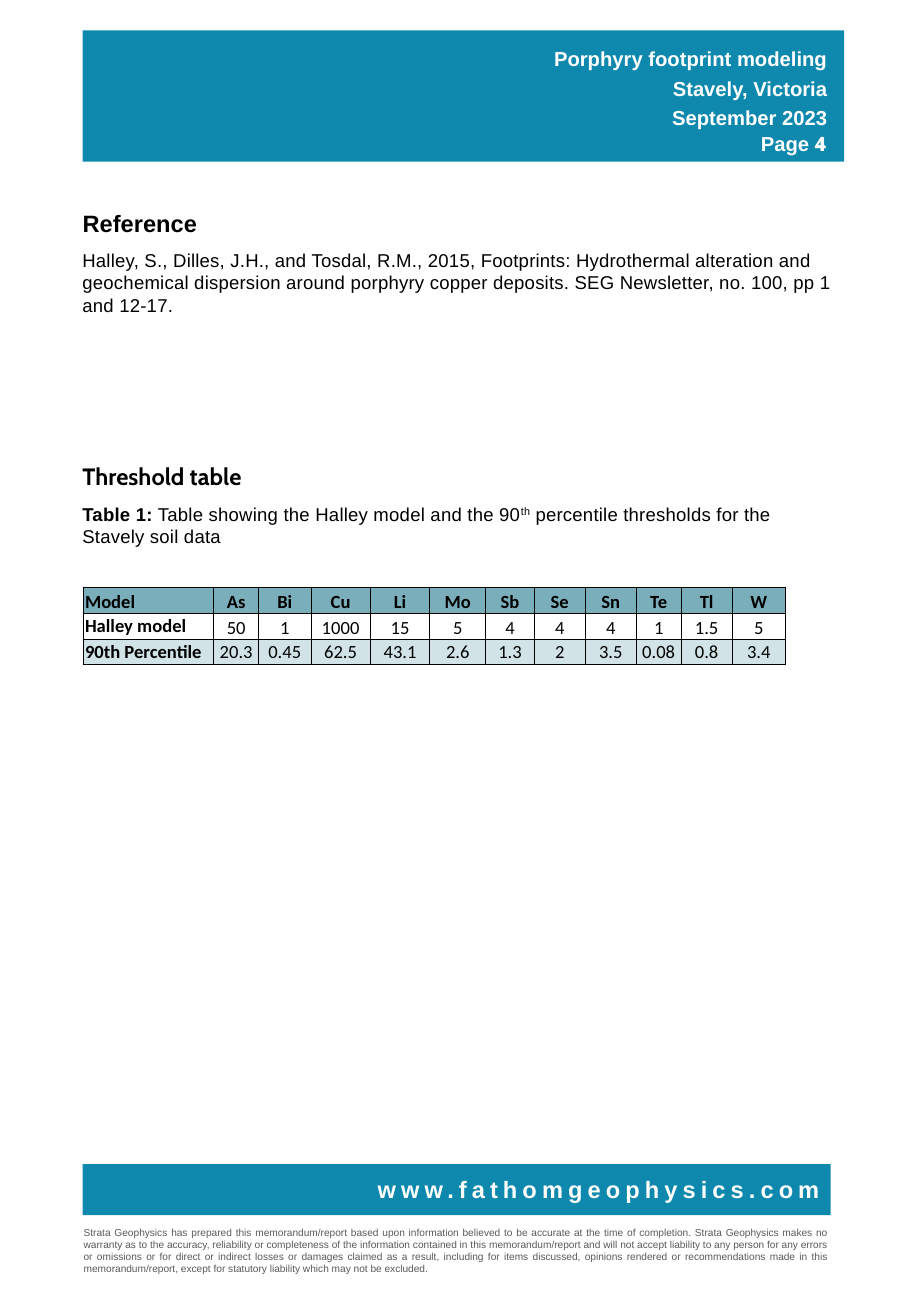
from dataclasses import dataclass

from lxml import etree
from pptx import Presentation
from pptx.dml.color import RGBColor
from pptx.enum.shapes import MSO_SHAPE
from pptx.enum.text import MSO_ANCHOR, PP_ALIGN
from pptx.oxml.ns import qn
from pptx.util import Inches, Pt

LEFT, CENTER, RIGHT, JUSTIFY = PP_ALIGN.LEFT, PP_ALIGN.CENTER, PP_ALIGN.RIGHT, PP_ALIGN.JUSTIFY
TOP, MIDDLE, BOTTOM = MSO_ANCHOR.TOP, MSO_ANCHOR.MIDDLE, MSO_ANCHOR.BOTTOM
RECTANGLE = MSO_SHAPE.RECTANGLE
TITLE_ONLY = 5

TEAL, WHITE, BLACK, GREY = "0E89AD", "FFFFFF", "000000", "595959"
HEADER_FILL, PERCENTILE_FILL = "7AAEBB", "D1E3E7"


@dataclass
class Span:
    text: str
    size: float
    color: str = BLACK
    bold: bool = False
    font: str = "Arial"
    spacing: float = 0
    baseline: int = 0


@dataclass
class TextBlock:
    left: float
    top: float
    width: float
    height: float
    spans: list[Span]
    align: PP_ALIGN = LEFT
    anchor: MSO_ANCHOR = TOP
    margin: float | None = None
    line_spacing: float | None = None
    space_after: float = 0


@dataclass
class Band:
    left: float
    top: float
    width: float
    height: float


def rgb(value: str) -> RGBColor:
    return RGBColor.from_string(value)


def style_run(run, span: Span) -> None:
    font = run.font
    font.name, font.size, font.bold = span.font, Pt(span.size), span.bold
    font.color.rgb = rgb(span.color)
    properties = run._r.get_or_add_rPr()
    if span.spacing:
        properties.set("spc", str(round(span.spacing * 100)))
    if span.baseline:
        properties.set("baseline", str(span.baseline * 1000))


def fill_text(shape, block: TextBlock) -> None:
    shape.left, shape.top = Inches(block.left), Inches(block.top)
    shape.width, shape.height = Inches(block.width), Inches(block.height)
    frame = shape.text_frame
    frame.word_wrap = True
    frame.vertical_anchor = block.anchor
    if block.margin is not None:
        frame.margin_left = frame.margin_right = Inches(block.margin)
        frame.margin_top = frame.margin_bottom = Inches(block.margin)
    paragraph = frame.paragraphs[0]
    paragraph.alignment = block.align
    if block.line_spacing:
        paragraph.line_spacing = block.line_spacing
    paragraph.space_after = Pt(block.space_after)
    for span in block.spans:
        run = paragraph.add_run()
        run.text = span.text
        style_run(run, span)


def add_text(slide, block: TextBlock) -> None:
    fill_text(slide.shapes.add_textbox(0, 0, 0, 0), block)


def add_band(slide, band: Band) -> None:
    shape = slide.shapes.add_shape(RECTANGLE, Inches(band.left), Inches(band.top),
                                   Inches(band.width), Inches(band.height))
    shape.shadow.inherit = False
    shape.fill.solid()
    shape.fill.fore_color.rgb = rgb(TEAL)
    shape.line.fill.background()


def set_border(cell, side: str, points: float) -> None:
    line = etree.SubElement(cell._tc.get_or_add_tcPr(), qn(f"a:ln{side}"), w=str(Pt(points)))
    fill = etree.SubElement(line, qn("a:solidFill"))
    etree.SubElement(fill, qn("a:srgbClr"), val=BLACK)


def fill_cell(cell, text: str, row: int, column: int) -> None:
    cell.margin_left = cell.margin_right = cell.margin_top = Inches(0.01)
    cell.margin_bottom = 0
    on_bottom = row == 0 or (row == 1 and column > 0)
    cell.vertical_anchor = BOTTOM if on_bottom else TOP
    for side in "LRTB":
        under_header = (row, side) in ((0, "B"), (1, "T"))
        set_border(cell, side, 1 if under_header else 0.5)
    fill = ROW_FILLS[row]
    if fill:
        cell.fill.solid()
        cell.fill.fore_color.rgb = rgb(fill)
    else:
        cell.fill.background()
    paragraph = cell.text_frame.paragraphs[0]
    paragraph.text = text
    paragraph.alignment = CENTER if column else LEFT
    style_run(paragraph.runs[0], Span(text, 11, bold=row == 0 or column == 0, font="Calibri"))


def add_threshold_table(slide) -> None:
    frame = slide.shapes.add_table(len(THRESHOLDS), len(COLUMN_WIDTHS), Inches(0.69), Inches(4.83),
                                   Inches(sum(COLUMN_WIDTHS)), Inches(sum(ROW_HEIGHTS)))
    table = frame.table
    table.horz_banding = False
    for column, width in zip(table.columns, COLUMN_WIDTHS):
        column.width = Inches(width)
    for r, (values, height) in enumerate(zip(THRESHOLDS, ROW_HEIGHTS)):
        table.rows[r].height = Inches(height)
        for c, text in enumerate(values):
            fill_cell(table.cell(r, c), text, r, c)


# Threshold data
COLUMN_WIDTHS = [1.07, 0.37, 0.43, 0.49, 0.49, 0.46, 0.4, 0.42, 0.42, 0.37, 0.42, 0.44]
ROW_HEIGHTS = [0.22, 0.21, 0.21]
ROW_FILLS = [HEADER_FILL, None, PERCENTILE_FILL]
THRESHOLDS = [
    ["Model", "As", "Bi", "Cu", "Li", "Mo", "Sb", "Se", "Sn", "Te", "Tl", "W"],
    ["Halley model", "50", "1", "1000", "15", "5", "4", "4", "4", "1", "1.5", "5"],
    ["90th Percentile", "20.3", "0.45", "62.5", "43.1", "2.6", "1.3", "2", "3.5", "0.08", "0.8", "3.4"],
]

# Header and footer
BANDS = [Band(0.68, 9.58, 6.16, 0.42), Band(0.68, 0.25, 6.27, 1.08)]
HEADER_LINES = [("Porphyry footprint modeling", 0.33), ("Stavely, Victoria", 0.58),
                ("September 2023", 0.82)]
DISCLAIMER = (
    "Strata Geophysics has prepared this memorandum/report based upon information believed to be "
    "accurate at the time of completion. Strata Geophysics makes no warranty as to the accuracy, "
    "reliability or completeness of the information contained in this memorandum/report and will "
    "not accept liability to any person for any errors or omissions or for direct or indirect "
    "losses or damages claimed as a result, including for items discussed, opinions rendered or "
    "recommendations made in this memorandum/report, except for statutory liability which may not "
    "be excluded.")
PAGE_FRAME = [
    TextBlock(0.59, 10.04, 6.32, 0.5, [Span(DISCLAIMER, 6, GREY)], JUSTIFY, MIDDLE),
    TextBlock(2.96, 9.73, 3.83, 0.25,
              [Span("www.fathomgeophysics.com", 14, "FFFFFE", True, spacing=3)],
              RIGHT, margin=0.04, line_spacing=0.5, space_after=10),
    TextBlock(6.08, 1.03, 0.82, 0.41, [Span("4", 12, WHITE, True, "Cabin")], RIGHT),
    TextBlock(5.83, 1.03, 1.07, 0.41, [Span("Page 4", 12, WHITE, True)], RIGHT),
    *(TextBlock(0.58, top, 6.33, 0.3, [Span(text, 12, WHITE, True)], RIGHT)
      for text, top in HEADER_LINES),
]

# Body
REFERENCE_HEADING = TextBlock(0.58, 1.67, 5.67, 0.34, [Span("Reference", 14, bold=True)])
CITATION = ("Halley, S., Dilles, J.H., and Tosdal, R.M., 2015, Footprints: Hydrothermal alteration "
            "and geochemical dispersion around porphyry copper deposits. SEG Newsletter, no. 100, "
            "pp 1 and 12-17.")
BODY = [
    TextBlock(0.58, 2, 6.42, 1.03, [Span(CITATION, 11, spacing=0.1)]),
    TextBlock(0.58, 4.09, 6.2, 0.47, [
        Span("Table 1:", 11, bold=True, spacing=0.1),
        Span(" Table showing the Halley model and the 90", 11, spacing=0.1),
        Span("th", 11, spacing=0.1, baseline=30),
        Span(" percentile thresholds for the Stavely soil data", 11, spacing=0.1),
    ]),
    TextBlock(0.58, 3.75, 4.25, 0.34, [Span("Threshold table", 14, bold=True, font="Cabin")]),
]


def main() -> None:
    presentation = Presentation()
    presentation.slide_width, presentation.slide_height = Inches(7.5), Inches(10.83)
    slide = presentation.slides.add_slide(presentation.slide_layouts[TITLE_ONLY])
    fill_text(slide.shapes.title, REFERENCE_HEADING)
    for band in BANDS:
        add_band(slide, band)
    for block in PAGE_FRAME + BODY:
        add_text(slide, block)
    add_threshold_table(slide)
    presentation.save("out.pptx")


if __name__ == "__main__":
    main()
